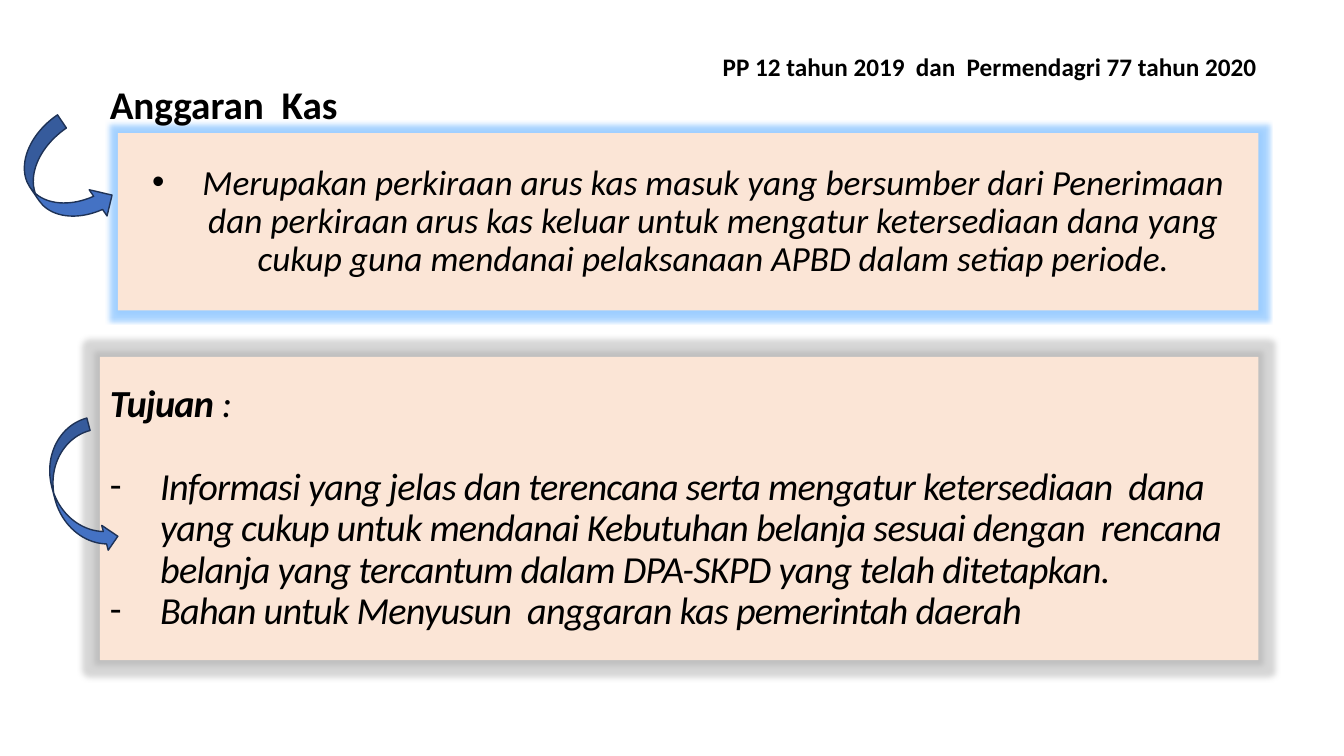
from lxml.etree import SubElement
from pptx import Presentation
from pptx.dml.color import RGBColor
from pptx.enum.shapes import MSO_SHAPE
from pptx.enum.text import MSO_ANCHOR, PP_ALIGN
from pptx.oxml.ns import qn
from pptx.util import Inches, Pt

HUES = {
    "ink": "000000",
    "peach": "FBE5D6",
    "blue": "4472C4",
    "navy": "1E3256",
    "sky": "99CCFF",
    "grey": "A5A5A5",
}
MEANING = (
    "Merupakan perkiraan arus kas masuk yang bersumber dari Penerimaan dan "
    "perkiraan arus kas keluar untuk mengatur ketersediaan dana yang cukup "
    "guna mendanai pelaksanaan APBD dalam setiap periode."
)
GOALS = [
    "Informasi yang jelas dan terencana serta mengatur ketersediaan  dana "
    "yang cukup untuk mendanai Kebutuhan belanja sesuai dengan  rencana "
    "belanja yang tercantum dalam DPA-SKPD yang telah ditetapkan.",
    "Bahan untuk Menyusun  anggaran kas pemerintah daerah",
]


def tint(name):
    return RGBColor.from_string(HUES[name])


def style(run, size, bold=False, slant=False, gap=None):
    font = run.font
    font.name = "Calibri"
    font.size = Pt(size)
    font.bold = bold
    font.italic = slant
    font.color.rgb = tint("ink")
    if gap is not None:
        run._r.get_or_add_rPr().set("spc", str(gap))


def bullet(para, mark):
    props = para._p.get_or_add_pPr()
    props.set("marL", str(Inches(0.5)))
    props.set("indent", str(-Inches(0.5)))
    SubElement(props, qn("a:buFont"), typeface="Arial" if mark == "•" else "Calibri")
    SubElement(props, qn("a:buChar"), char=mark)


def panel(slide, box, hue, reach, alpha):
    shape = slide.shapes.add_shape(MSO_SHAPE.RECTANGLE, *map(Inches, box))
    shape.fill.solid()
    shape.fill.fore_color.rgb = tint("peach")
    shape.line.fill.background()
    effects = SubElement(shape._element.spPr, qn("a:effectLst"))
    glow = SubElement(effects, qn("a:glow"), rad=str(Pt(reach)))
    color = SubElement(glow, qn("a:srgbClr"), val=HUES[hue])
    SubElement(color, qn("a:alpha"), val=str(alpha * 1000))
    frame = shape.text_frame
    frame.word_wrap = True
    frame.vertical_anchor = MSO_ANCHOR.MIDDLE
    return frame


def meaning(slide, box):
    para = panel(slide, box, "sky", 5, 80).paragraphs[0]
    para.text = MEANING
    para.alignment = PP_ALIGN.CENTER
    para.line_spacing = 0.9
    bullet(para, "•")
    style(para.runs[0], 25.2, slant=True)


def goals(slide, box):
    frame = panel(slide, box, "grey", 8, 45)
    frame.text = "\n".join(["Tujuan"] + GOALS)
    head, *items = frame.paragraphs
    head.add_run().text = " :"
    for para in frame.paragraphs:
        para.alignment = PP_ALIGN.LEFT
        para.line_spacing = 0.9
        for run in para.runs:
            style(run, 27.3, slant=True, gap=-50)
    head.runs[0].font.bold = True
    items[0].space_before = Pt(30)
    for para in items:
        bullet(para, "-")


def label(slide, box, text, size, wrap=True):
    frame = slide.shapes.add_textbox(*map(Inches, box)).text_frame
    frame.word_wrap = wrap
    frame.text = text
    style(frame.paragraphs[0].runs[0], size, bold=True)


def arrow(slide, box, turn):
    shape = slide.shapes.add_shape(MSO_SHAPE.CURVED_RIGHT_ARROW, *map(Inches, box))
    shape.rotation = turn
    shape.shadow.inherit = False
    shape.fill.solid()
    shape.fill.fore_color.rgb = tint("blue")
    shape.line.color.rgb = tint("navy")
    shape.line.width = Pt(1)


def main():
    deck = Presentation()
    deck.slide_width, deck.slide_height = Inches(13.33), Inches(7.5)
    slide = deck.slides.add_slide(deck.slide_layouts[6])
    meaning(slide, (1.17, 1.32, 11.31, 1.76))
    goals(slide, (0.99, 3.54, 11.49, 3.01))
    label(slide, (0.99, 0.75, 2.58, 0.57), "Anggaran  Kas", 28, wrap=False)
    label(slide, (7.07, 0.46, 5.8, 0.4),
          "PP 12 tahun 2019  dan  Permendagri 77 tahun 2020", 18)
    arrow(slide, (0.31, 1.22, 0.63, 1.12), 325.8)
    arrow(slide, (0.53, 4.19, 0.51, 1.34), 345.3)
    deck.save("out.pptx")


if __name__ == "__main__":
    main()
